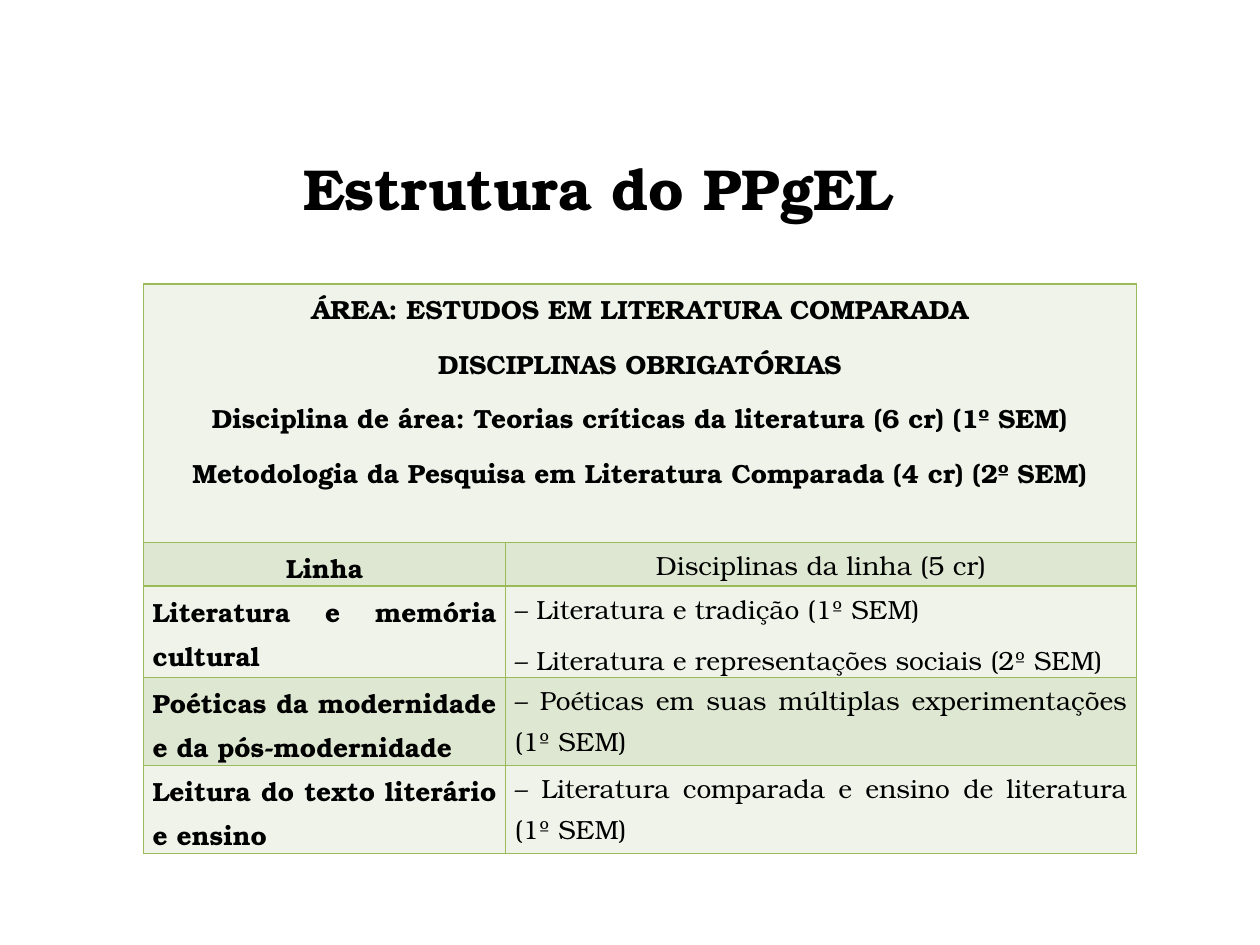
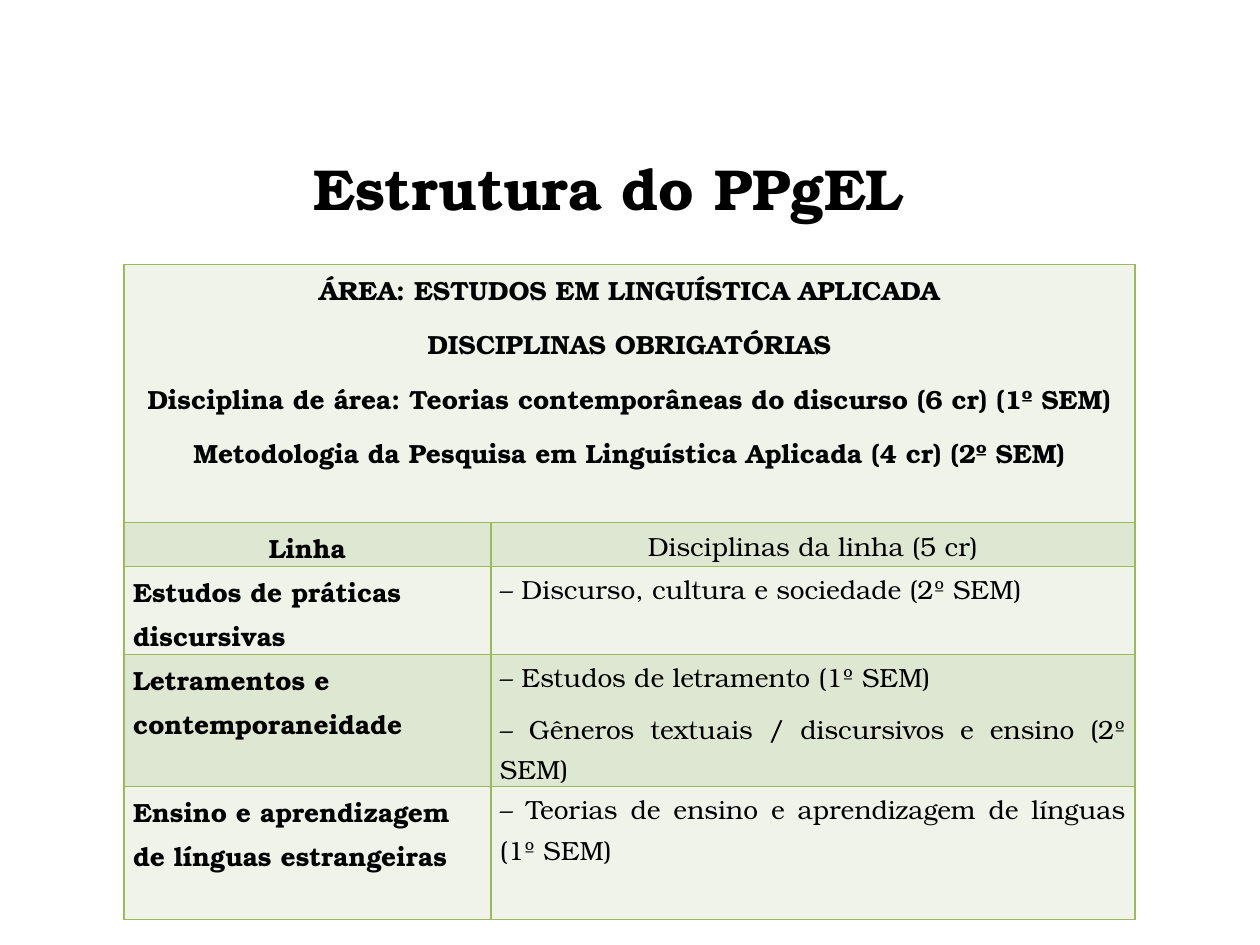
"""Builds two slides on the structure of the PPgEL programme, one table per area."""
from lxml import etree
from pptx import Presentation
from pptx.dml.color import RGBColor
from pptx.enum.text import MSO_ANCHOR, PP_ALIGN
from pptx.oxml.ns import qn
from pptx.util import Pt

CENTER, LEFT, JUSTIFY = PP_ALIGN.CENTER, PP_ALIGN.LEFT, PP_ALIGN.JUSTIFY
MIDDLE = MSO_ANCHOR.MIDDLE
BLACK = RGBColor(0x00, 0x00, 0x00)
GREEN = RGBColor(0x9B, 0xBB, 0x59)
PALE = RGBColor(0xEF, 0xF3, 0xEA)
SAGE = RGBColor(0xDE, 0xE7, 0xD1)
FONT = "TeX Gyre Bonum"
INSET = 5.2
TITLE = "Estrutura do PPgEL"
HEADINGS = (["Linha"], ["Disciplinas da linha (5 cr)"])

AREAS = [
    {
        "title": (48.2, 586.8), "table": (82, 162.2), "line_align": JUSTIFY,
        "columns": (207, 360.4), "rows": (147.7, 25.1, 52.1, 50.3, 50.3),
        "required": [
            "ÁREA: ESTUDOS EM LITERATURA COMPARADA",
            "DISCIPLINAS OBRIGATÓRIAS",
            "Disciplina de área: Teorias críticas da literatura (6 cr) (1º SEM)",
            "Metodologia da Pesquisa em Literatura Comparada (4 cr) (2º SEM)",
        ],
        "lines": [
            (["Literatura e memória cultural"],
             ["– Literatura e tradição (1º SEM)",
              "– Literatura e representações sociais (2º SEM)"]),
            (["Poéticas da modernidade e da pós-modernidade"],
             ["– Poéticas em suas múltiplas experimentações (1º SEM)"]),
            (["Leitura do texto literário e ensino"],
             ["– Literatura comparada e ensino de literatura (1º SEM)"]),
        ],
    },
    {
        "title": (59.6, 576), "table": (70.9, 151), "line_align": LEFT,
        "columns": (209.6, 368), "rows": (147.7, 25.1, 50.3, 75.4, 75.9),
        "required": [
            "ÁREA: ESTUDOS EM LINGUÍSTICA APLICADA",
            "DISCIPLINAS OBRIGATÓRIAS",
            "Disciplina de área: Teorias contemporâneas do discurso (6 cr) (1º SEM)",
            "Metodologia da Pesquisa em Linguística Aplicada (4 cr) (2º SEM)",
        ],
        "lines": [
            (["Estudos de práticas discursivas"],
             ["– Discurso, cultura e sociedade (2º SEM)"]),
            (["Letramentos e contemporaneidade"],
             ["– Estudos de letramento (1º SEM)",
              "– Gêneros textuais / discursivos e ensino (2º SEM)"]),
            (["Ensino e aprendizagem de línguas estrangeiras"],
             ["– Teorias de ensino e aprendizagem de línguas (1º SEM)"]),
        ],
    },
]


def write(frame, texts, size, bold, **paragraph_format):
    for index, text in enumerate(texts):
        para = frame.add_paragraph() if index else frame.paragraphs[0]
        for name, value in paragraph_format.items():
            setattr(para, name, value)
        span = para.add_run()
        span.text = text
        for name, value in {"name": FONT, "size": Pt(size), "bold": bold}.items():
            setattr(span.font, name, value)
        span.font.color.rgb = BLACK


def paint(cell, color):
    margins = {"margin_left": INSET, "margin_right": INSET, "margin_top": 0, "margin_bottom": 0}
    for name, value in margins.items():
        setattr(cell, name, Pt(value))
    cell.fill.solid()
    cell.fill.fore_color.rgb = color
    properties = cell._tc.get_or_add_tcPr()
    for index, side in enumerate(("a:lnL", "a:lnR", "a:lnT", "a:lnB")):
        border = etree.Element(qn(side), w=str(Pt(1)))
        fill = etree.SubElement(border, qn("a:solidFill"))
        etree.SubElement(fill, qn("a:srgbClr"), val=str(GREEN))
        properties.insert(index, border)


deck = Presentation()
deck.slide_width, deck.slide_height = Pt(720), Pt(540)

for area in AREAS:
    page = deck.slides.add_slide(deck.slide_layouts[6])

    left, width = area["title"]
    box = page.shapes.add_textbox(Pt(left), Pt(80.6), Pt(width), Pt(53.3))
    box.text_frame.word_wrap = True
    box.text_frame.vertical_anchor = MIDDLE
    write(box.text_frame, [TITLE], 33, True, alignment=CENTER)

    columns, rows = area["columns"], area["rows"]
    left, top = area["table"]
    table = page.shapes.add_table(len(rows), len(columns), Pt(left), Pt(top),
                                  Pt(sum(columns)), Pt(sum(rows))).table
    table.first_row = table.horz_banding = False
    for column, width in zip(table.columns, columns):
        column.width = Pt(width)
    for row, height in zip(table.rows, rows):
        row.height = Pt(height)

    table.cell(0, 0).merge(table.cell(0, 1))
    contents = [(area["required"],), HEADINGS, *area["lines"]]
    for r, row in enumerate(table.rows):
        for cell in row.cells:
            paint(cell, SAGE if r % 2 else PALE)
        for c, texts in enumerate(contents[r]):
            align = CENTER if r < 2 else (area["line_align"], JUSTIFY)[c]
            write(row.cells[c].text_frame, texts, 15, c == 0,
                  alignment=align, line_spacing=1.15, space_after=Pt(6))

deck.save("out.pptx")
